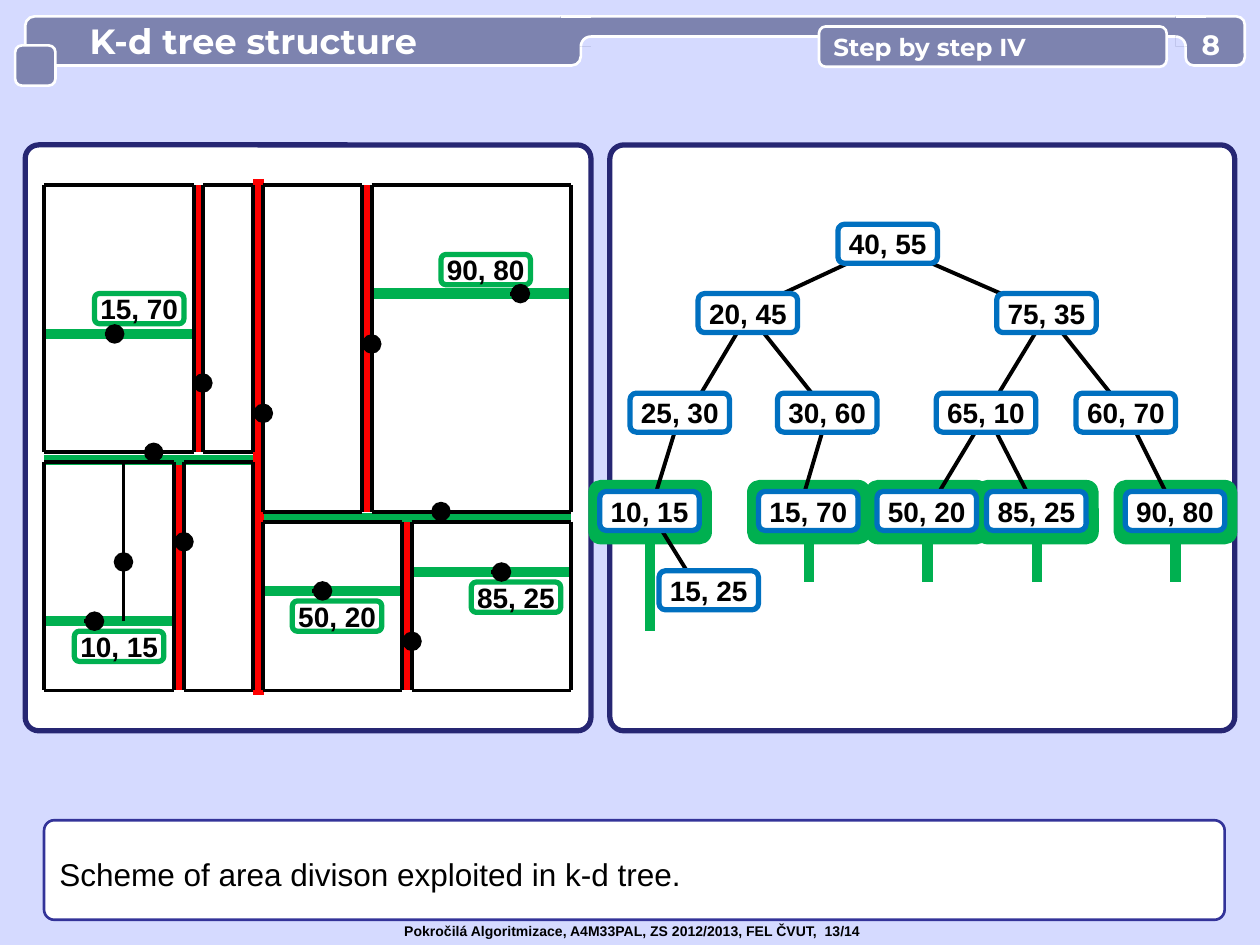
"""Build the k-d tree slide: area division on the left, tree on the right."""
import math

import lxml.etree
import pptx
import pptx.dml.color
import pptx.enum.shapes
import pptx.enum.text
import pptx.oxml.ns
import pptx.util

Inches = pptx.util.Inches
RGBColor = pptx.dml.color.RGBColor
SHAPES = pptx.enum.shapes.MSO_SHAPE
ALIGN = pptx.enum.text.PP_ALIGN
qn = pptx.oxml.ns.qn

BACKGROUND = RGBColor(0xD5, 0xDA, 0xFF)
HEADER = RGBColor(0x7D, 0x83, 0xAF)
PANEL_EDGE = RGBColor(0x26, 0x26, 0x73)
CAPTION_EDGE = RGBColor(0x33, 0x33, 0x99)
WHITE = RGBColor(0xFF, 0xFF, 0xFF)
BLACK = RGBColor(0x00, 0x00, 0x00)
RED = RGBColor(0xFF, 0x00, 0x00)
GREEN = RGBColor(0x00, 0xB0, 0x50)
BLUE = RGBColor(0x00, 0x70, 0xC0)

presentation = pptx.Presentation()
presentation.slide_width = Inches(10)
presentation.slide_height = Inches(7.5)
slide = presentation.slides.add_slide(presentation.slide_layouts[6])
slide.background.fill.solid()
slide.background.fill.fore_color.rgb = BACKGROUND


def add_box(text, left, top, width, height, kind=SHAPES.ROUNDED_RECTANGLE, fill=WHITE,
            edge=None, weight=3, corner=None, font="Arial", size=16, color=BLACK, bold=True,
            align=ALIGN.CENTER, inset=0, margin=0, wrap=True, spacing=None):
    place = [Inches(value) for value in (left, top, width, height)]
    if kind is None:
        shape = slide.shapes.add_textbox(*place)
    else:
        shape = slide.shapes.add_shape(kind, *place)
        shape.shadow.inherit = False
        shape.fill.solid()
        shape.fill.fore_color.rgb = fill
        if edge is None:
            shape.line.fill.background()
        else:
            shape.line.color.rgb = edge
            shape.line.width = pptx.util.Pt(weight)
        if corner is not None:
            shape.adjustments[0] = corner
    if text:
        frame = shape.text_frame
        frame.word_wrap = wrap
        frame.vertical_anchor = pptx.enum.text.MSO_ANCHOR.MIDDLE
        frame.margin_left, frame.margin_right = Inches(inset), Inches(margin)
        frame.margin_top = frame.margin_bottom = 0
        paragraph = frame.paragraphs[0]
        paragraph.alignment = align
        paragraph.line_spacing = spacing
        run = paragraph.add_run()
        run.text = text
        run.font.name = font
        run.font.size = pptx.util.Pt(size)
        run.font.bold = bold
        run.font.color.rgb = color


def add_line(x1, y1, x2, y2, color=BLACK, weight=2.25, dot=False):
    connector = slide.shapes.add_connector(
        pptx.enum.shapes.MSO_CONNECTOR.STRAIGHT, Inches(x1), Inches(y1), Inches(x2), Inches(y2))
    connector.line.color.rgb = color
    connector.line.width = pptx.util.Pt(weight)
    properties = connector.line._get_or_add_ln()
    if dot:
        lxml.etree.SubElement(properties, qn("a:tailEnd"), type="oval", w="lg", len="lg")
    lxml.etree.SubElement(properties.getparent(), qn("a:effectLst"))


for left, width in ((4.84, 4.96), (0.2, 4.49)):
    add_box("", left, 1.15, width, 4.65, edge=PANEL_EDGE, corner=0.024)

for x, top, bottom in ((2.91, 1.47, 4.06), (1.41, 3.67, 5.48), (1.57, 1.47, 3.59)):
    add_line(x, top, x, bottom, RED, 6)
for y, left, right in ((4.11, 2.09, 4.53), (3.65, 0.35, 2.01)):
    add_line(left, y, right, y, GREEN, 6)
for x, top, bottom in ((3.23, 4.14, 5.48), (2.05, 1.42, 5.52)):
    add_line(x, top, x, bottom, RED, 6)
leaf_splits = [
    (2.65, 0.35, 1.54), (2.33, 2.95, 4.53), (4.54, 3.27, 4.53),
    (4.69, 2.09, 3.19), (4.93, 0.35, 1.38),
]
for y, left, right in leaf_splits:
    add_line(left, y, right, y, GREEN, 6)

area_labels = [
    ("15, 70", 0.75, 2.33), ("50, 20", 2.32, 4.77), ("85, 25", 3.74, 4.62),
    ("90, 80", 3.5, 2.02), ("10, 15", 0.59, 5.01),
]
for text, left, top in area_labels:
    add_box(text, left, top, 0.71, 0.24, edge=GREEN)

areas = [
    (0.35, 1.47, 1.54, 3.59), (1.61, 1.47, 2.01, 3.59),
    (2.09, 1.47, 2.87, 4.06), (2.95, 1.47, 4.53, 4.06),
    (0.35, 3.67, 1.38, 5.48), (1.46, 3.67, 2.01, 5.48),
    (2.09, 4.14, 3.19, 5.48), (3.27, 4.14, 4.53, 5.48),
]
for left, top, right, bottom in areas:
    for y in (top, bottom):
        add_line(left, y, right, y)
    for x in (left, right):
        add_line(x, top, x, bottom)
add_line(0.98, 4.93, 0.98, 3.67)

points_on_rows = [
    (0.91, 2.65), (3.5, 4.06), (4.13, 2.33), (3.98, 4.54),
    (2.56, 4.69), (1.22, 3.59), (0.75, 4.93),
]
points_on_columns = [(2.95, 2.73), (3.27, 5.09), (1.61, 3.04), (1.46, 4.3), (0.98, 4.46), (2.09, 3.28)]
for x, y in points_on_rows:
    add_line(x - 0.08, y, x, y, dot=True)
for x, y in points_on_columns:
    add_line(x, y - 0.08, x, y, dot=True)

nodes = {
    "40, 55": (7.05, 1.94), "20, 45": (5.94, 2.49), "75, 35": (8.31, 2.49),
    "25, 30": (5.4, 3.28), "30, 60": (6.57, 3.28), "65, 10": (7.83, 3.28),
    "60, 70": (8.94, 3.28), "10, 15": (5.16, 4.06), "15, 70": (6.42, 4.06),
    "50, 20": (7.36, 4.06), "85, 25": (8.23, 4.06), "90, 80": (9.33, 4.06),
    "15, 25": (5.63, 4.69),
}
edges = [
    ("40, 55", "20, 45", -0.07), ("40, 55", "75, 35", 0), ("20, 45", "25, 30", 0.07),
    ("20, 45", "30, 60", 0), ("75, 35", "65, 10", 0), ("75, 35", "60, 70", 0),
    ("25, 30", "10, 15", 0), ("30, 60", "15, 70", -0.08), ("65, 10", "50, 20", 0),
    ("65, 10", "85, 25", 0), ("60, 70", "90, 80", 0), ("10, 15", "15, 25", -0.08),
]
for text, left, top in area_labels:
    x, y = nodes[text]
    add_line(x, y, x, 5.01 if text == "10, 15" else 4.62, GREEN, 6)
    add_box("", x - 0.47, y - 0.23, 0.94, 0.47, fill=GREEN, edge=GREEN)
for parent, child, shift in edges:
    x, y = nodes[child]
    add_line(*nodes[parent], x + shift, y)
for text, (x, y) in nodes.items():
    add_box(text, x - 0.4, y - 0.16, 0.79, 0.31, edge=BLUE)

add_box("Scheme of area divison exploited in k-d tree.", 0.35, 6.51, 9.37, 0.79, edge=CAPTION_EDGE,
        weight=1.5, corner=0.103, size=18, bold=False, align=ALIGN.LEFT, inset=0.1, spacing=1.2)

header = dict(fill=HEADER, edge=WHITE, weight=1.5, font="Montserrat", color=WHITE, align=ALIGN.LEFT)
add_box("K-d tree structure", 0.2, 0.13, 4.41, 0.39, corner=0.19, size=20, inset=0.49, **header)
add_box("", 4.61, 0.13, 4.88, 0.16, corner=0.5, **header)
add_box("", 0.12, 0.36, 0.32, 0.32, corner=0.17, **header)
add_box("", 9.41, 0.13, 0.47, 0.39, corner=0.17, **header)
for joint_left, center_x, direction in ((4.45, 4.69, -1), (9.33, 9.33, 1)):
    add_box("", joint_left, 0.13, 0.24, 0.24, kind=SHAPES.RECTANGLE, fill=HEADER)
    add_line(joint_left, 0.13, joint_left + 0.24, 0.13, WHITE, 1.5)
    angles = [math.radians(step * 10) for step in range(10)]
    arc = [(Inches(center_x + direction * 0.08 * math.sin(angle)),
            Inches(0.37 - 0.08 * math.cos(angle))) for angle in angles]
    for closed in (True, False):
        builder = slide.shapes.build_freeform(*arc[0])
        corner_point = [(Inches(center_x), Inches(0.37))] if closed else []
        builder.add_line_segments(arc[1:] + corner_point, close=closed)
        shape = builder.convert_to_shape()
        shape.shadow.inherit = False
        if closed:
            shape.fill.solid()
            shape.fill.fore_color.rgb = BACKGROUND
            shape.line.fill.background()
        else:
            shape.fill.background()
            shape.line.color.rgb = WHITE
            shape.line.width = pptx.util.Pt(1.5)
add_box("Step by step IV", 6.5, 0.21, 2.76, 0.32, corner=0.17, size=14, inset=0.1, **header)
add_box("8", 9.41, 0.22, 0.4, 0.27, kind=None, font="Montserrat", color=WHITE)
add_box("Pokročilá Algoritmizace, A4M33PAL, ZS 2012/2013, FEL ČVUT,  13/14", 3.11, 7.27, 3.9, 0.24,
        kind=None, size=8, align=ALIGN.LEFT, inset=0.1, margin=0.1, wrap=False)

presentation.save("out.pptx")
